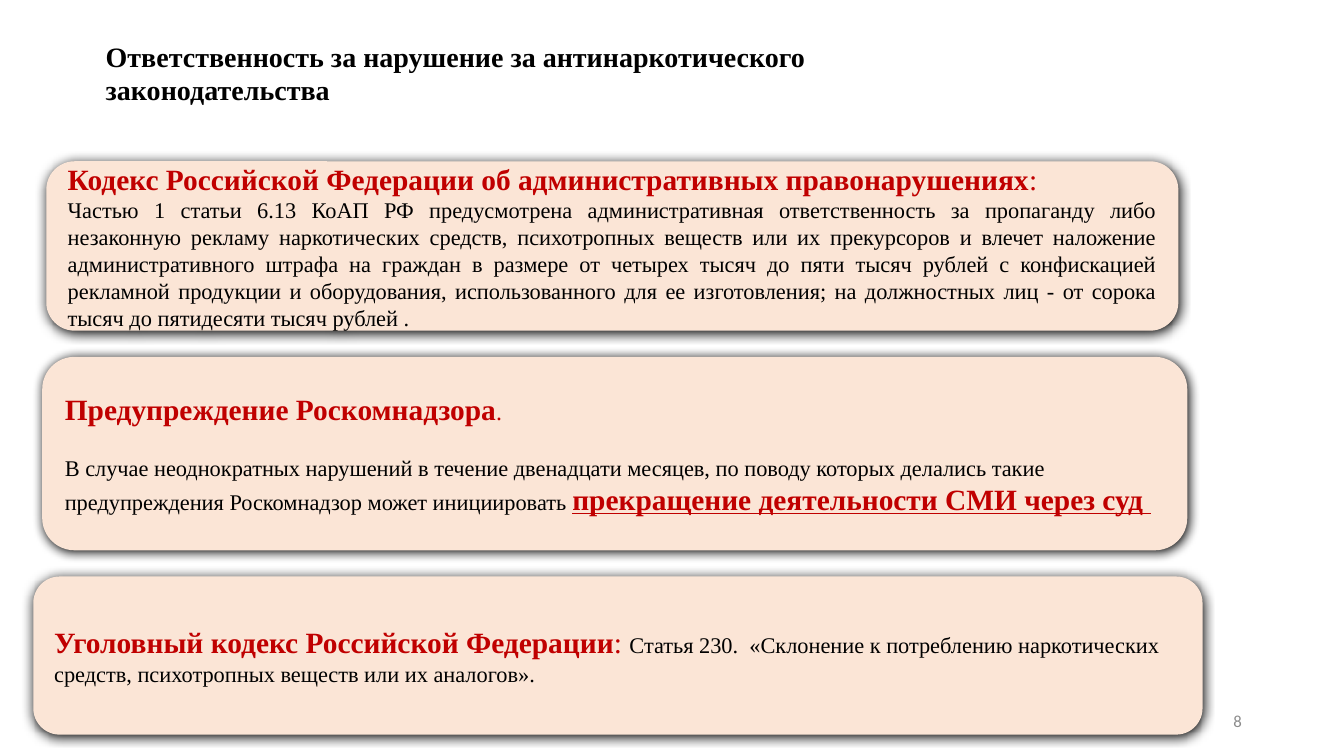
from lxml.etree import SubElement
from pptx import Presentation
from pptx.dml.color import RGBColor
from pptx.enum.shapes import MSO_SHAPE
from pptx.enum.text import MSO_ANCHOR, PP_ALIGN
from pptx.oxml.ns import qn
from pptx.util import Pt

SERIF = "Times New Roman"
HEADING = {"name": SERIF, "size": Pt(21), "bold": True, "color": "C00000"}
COLON = {**HEADING, "bold": False}
STOP = {**COLON, "size": Pt(17)}
BODY = {"name": SERIF, "size": Pt(16), "bold": False, "color": "000000"}
SANCTION = {**HEADING, "underline": True}
TITLE = {"name": SERIF, "size": Pt(20), "bold": True, "color": "000000"}
NUMBER = {"name": "Calibri", "size": Pt(12), "color": "8C8C8C"}

ARTICLES = [
    ((33.1, 115.2, 808.6, 121), PP_ALIGN.JUSTIFY, 0, [
        [("Кодекс Российской Федерации об административных правонарушениях", HEADING), (": ", COLON)],
        [("Частью 1 статьи 6.13 КоАП РФ предусмотрена административная ответственность за пропаганду "
          "либо незаконную рекламу наркотических средств, психотропных веществ или их прекурсоров "
          "и влечет наложение административного штрафа на граждан в размере от четырех тысяч до пяти "
          "тысяч рублей с конфискацией рекламной продукции и оборудования, использованного для ее "
          "изготовления; на должностных лиц - от сорока тысяч до пятидесяти тысяч рублей .", BODY)],
    ]),
    ((30.2, 254.9, 817.9, 138.2), PP_ALIGN.LEFT, 19.5, [
        [("Предупреждение Роскомнадзора", HEADING), (".", STOP)],
        [("В случае неоднократных нарушений в течение двенадцати месяцев, по поводу которых делались "
          "такие предупреждения Роскомнадзор может инициировать ", BODY),
         ("прекращение деятельности СМИ через суд ", SANCTION)],
    ]),
    ((23.8, 411.8, 835.2, 113), PP_ALIGN.LEFT, 0, [
        [("Уголовный кодекс Российской Федерации", HEADING), (": ", COLON),
         ("Статья 230.  «Склонение к потреблению наркотических средств, психотропных веществ "
          "или их аналогов».", BODY)],
    ]),
]


def rgb(code):
    return RGBColor.from_string(code)


def write(frame, paragraphs, align, gap=0, margins=(7.2, 3.6), anchor=MSO_ANCHOR.MIDDLE):
    side, edge = map(Pt, margins)
    settings = {"word_wrap": True, "vertical_anchor": anchor, "margin_left": side,
                "margin_right": side, "margin_top": edge, "margin_bottom": edge}
    for key, value in settings.items():
        setattr(frame, key, value)
    for index, pieces in enumerate(paragraphs):
        paragraph = frame.add_paragraph() if index else frame.paragraphs[0]
        paragraph.alignment = align
        if index and gap:
            paragraph.space_before = Pt(gap)
        for wording, style in pieces:
            run = paragraph.add_run()
            run.text = wording
            for key, value in style.items():
                if key == "color":
                    run.font.color.rgb = rgb(value)
                else:
                    setattr(run.font, key, value)


def add_label(slide, box, wording, style, align, anchor):
    label = slide.shapes.add_textbox(*map(Pt, box))
    write(label.text_frame, [[(wording, style)]], align, anchor=anchor)


def add_shadow(shape):
    shape.shadow.inherit = False
    effects = shape.element.spPr.find(qn("a:effectLst"))
    shadow = SubElement(effects, qn("a:outerShdw"), blurRad=str(Pt(8.5)), dist=str(Pt(1)),
                        dir="5400000", algn="ctr", rotWithShape="0")
    SubElement(shadow, qn("a:srgbClr"), val="000000")


def add_article(slide, box, align, gap, paragraphs):
    panel = slide.shapes.add_shape(MSO_SHAPE.ROUNDED_RECTANGLE, *map(Pt, box))
    panel.fill.solid()
    panel.fill.fore_color.rgb = rgb("FBE5D6")
    panel.line.fill.background()
    add_shadow(panel)
    write(panel.text_frame, paragraphs, align, gap, margins=(9.4, 5))


def main():
    deck = Presentation()
    deck.slide_width, deck.slide_height = Pt(960), Pt(540)
    slide = deck.slides.add_slide(deck.slide_layouts[6])
    add_label(slide, (68.4, 24.5, 671.8, 55.4),
              "Ответственность за нарушение за антинаркотического законодательства",
              TITLE, PP_ALIGN.LEFT, MSO_ANCHOR.TOP)
    for article in ARTICLES:
        add_article(slide, *article)
    add_label(slide, (678.2, 500.4, 216, 28.8), "8", NUMBER, PP_ALIGN.RIGHT, MSO_ANCHOR.MIDDLE)
    deck.save("out.pptx")


if __name__ == "__main__":
    main()
